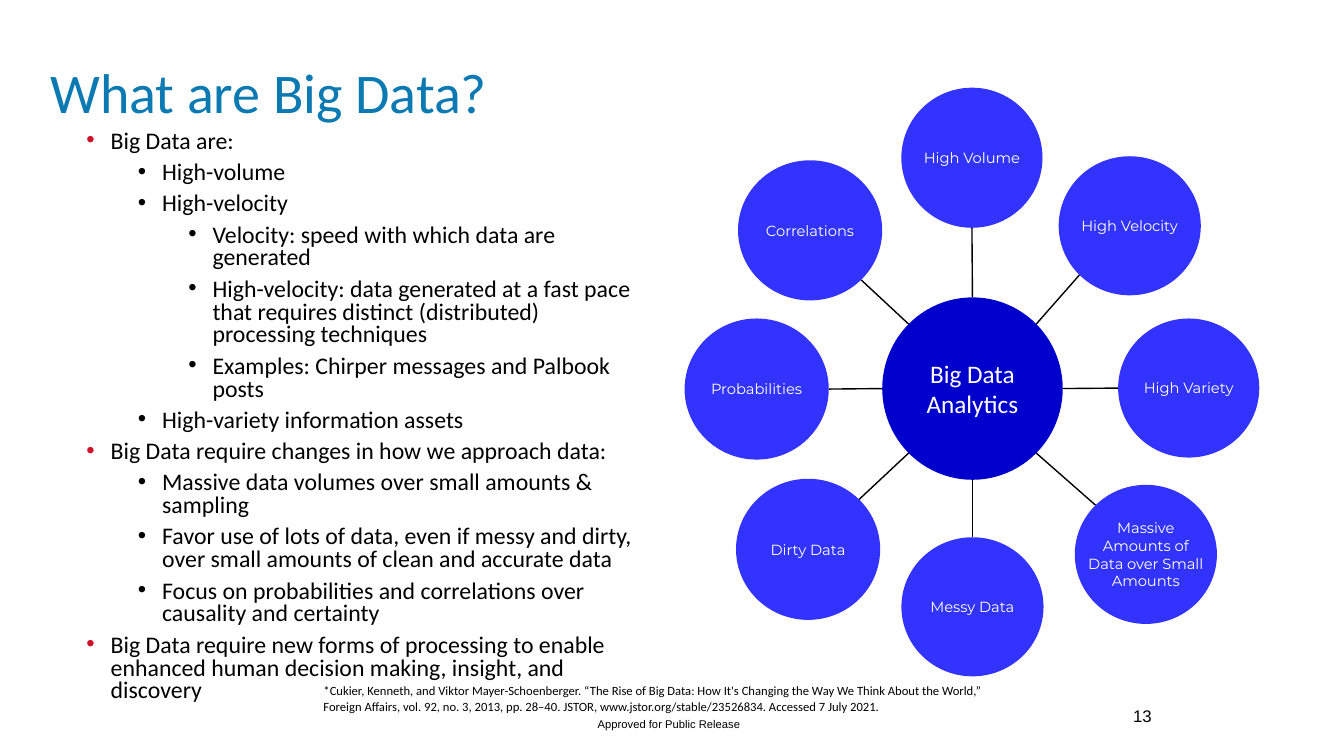
from math import hypot

from lxml.etree import SubElement
from pptx import Presentation
from pptx.dml.color import RGBColor
from pptx.enum.shapes import MSO_CONNECTOR as Connector, MSO_SHAPE as Shape
from pptx.enum.text import MSO_ANCHOR as Anchor, MSO_AUTO_SIZE as AutoSize, PP_ALIGN as Align
from pptx.oxml.ns import qn
from pptx.util import Pt

PX = 9144  # 100 px to the inch
COLORS = {"title": "0C7AB2", "text": "000000", "white": "FFFFFF",
          "bullet": "CE1126", "node": "3333FF", "hub": "0000CC"}

TITLE = "What are Big Data?"
BULLETS = [
    (0, "Big Data are:"),
    (1, "High-volume"),
    (1, "High-velocity"),
    (2, "Velocity: speed with which data are generated"),
    (2, "High-velocity: data generated at a fast pace that requires distinct "
        "(distributed) processing techniques"),
    (2, "Examples: Chirper messages and Palbook posts"),
    (1, "High-variety information assets"),
    (0, "Big Data require changes in how we approach data:"),
    (1, "Massive data volumes over small amounts & sampling"),
    (1, "Favor use of lots of data, even if messy and dirty, over small amounts "
        "of clean and accurate data"),
    (1, "Focus on probabilities and correlations over causality and certainty"),
    (0, "Big Data require new forms of processing to enable enhanced human "
        "decision making, insight, and discovery"),
]
BULLET_INDENTS = [24, 75, 125]
BULLET_HANG = 24

HUB = (["Big Data", "Analytics"], (875, 295, 179, 181))
# lines of text, box, direction from the hub
NODES = [
    (["High Volume"], (894, 87, 140, 139), (0, -1)),
    (["High Velocity"], (1050, 155, 141, 138), (1, -1)),
    (["High Variety"], (1109, 316, 140, 138), (1, 0)),
    (["Massive", "Amounts of", "Data over Small", "Amounts"], (1066, 481, 141, 138), (1, 1)),
    (["Messy Data"], (894, 533, 141, 138), (0, 1)),
    (["Dirty Data"], (730, 475, 143, 140), (-1, 1)),
    (["Probabilities"], (679, 316, 143, 140), (-1, 0)),
    (["Correlations"], (732, 159, 143, 139), (-1, -1)),
]

# text, box, font, size, wraps
NOTES = [
    ("Approved for Public Release", (583, 707, 166, 24), "Arial", 8, False),
    ("13", (1114, 695, 46, 40), "Arial", 12, True),
    ("*Cukier, Kenneth, and Viktor Mayer-Schoenberger. “The Rise of Big Data: How It's "
     "Changing the Way We Think About the World,” Foreign Affairs, vol. 92, no. 3, 2013, "
     "pp. 28–40. JSTOR, www.jstor.org/stable/23526834. Accessed 7 July 2021.",
     (311, 673, 712, 40), "Calibri", 9, True),
]


def emu(lengths):
    return [round(length * PX) for length in lengths]


def color(name):
    return RGBColor.from_string(COLORS[name])


def add_run(paragraph, text, font, size, color_name):
    run = paragraph.add_run()
    run.text = text
    run.font.name = font
    run.font.size = Pt(size)
    run.font.color.rgb = color(color_name)


def add_paragraph(frame, index):
    """Return the frame's first paragraph for index 0, otherwise a new one."""
    return frame.add_paragraph() if index else frame.paragraphs[0]


def add_bullet(paragraph, level):
    paragraph.level = level
    properties = paragraph._p.get_or_add_pPr()
    properties.set("marL", str(BULLET_INDENTS[level] * PX))
    properties.set("indent", str(-BULLET_HANG * PX))
    bullet_color = SubElement(properties, qn("a:buClr"))
    SubElement(bullet_color, qn("a:srgbClr"), val=COLORS["text" if level else "bullet"])
    SubElement(properties, qn("a:buFont"), typeface="Arial")
    SubElement(properties, qn("a:buChar"), char="•")


def add_title(slide):
    title = slide.shapes.title
    title.left, title.top, title.width, title.height = emu((40, 60, 1182, 74))
    frame = title.text_frame
    frame.auto_size = AutoSize.NONE
    frame.vertical_anchor = Anchor.MIDDLE
    paragraph = frame.paragraphs[0]
    paragraph.alignment = Align.LEFT
    paragraph.line_spacing = 0.8
    add_run(paragraph, TITLE, "Calibri", 40, "title")


def add_bullet_list(slide):
    frame = slide.shapes.add_textbox(*emu((76, 125, 583, 588))).text_frame
    frame.word_wrap = True
    frame.margin_right = 20 * PX
    for index, (level, text) in enumerate(BULLETS):
        paragraph = add_paragraph(frame, index)
        add_bullet(paragraph, level)
        paragraph.line_spacing = 0.8
        paragraph.space_after = Pt(6)
        add_run(paragraph, text, "Calibri", 17, "text")


def add_circle(slide, lines, box, fill, font, size):
    circle = slide.shapes.add_shape(Shape.OVAL, *emu(box))
    circle.shadow.inherit = False
    circle.fill.solid()
    circle.fill.fore_color.rgb = color(fill)
    circle.line.fill.background()
    frame = circle.text_frame
    frame.word_wrap = False
    frame.vertical_anchor = Anchor.MIDDLE
    for index, text in enumerate(lines):
        paragraph = add_paragraph(frame, index)
        paragraph.alignment = Align.CENTER
        add_run(paragraph, text, font, size, "white")


def rim_point(box, dx, dy):
    """Point on the ellipse inside box, in the direction (dx, dy) from its centre."""
    left, top, width, height = box
    reach = 2 * hypot(dx, dy)
    return left + width / 2 + dx * width / reach, top + height / 2 + dy * height / reach


def add_spoke(slide, node_box, direction):
    dx, dy = direction
    ends = rim_point(HUB[1], dx, dy) + rim_point(node_box, -dx, -dy)
    spoke = slide.shapes.add_connector(Connector.STRAIGHT, *emu(ends))
    spoke.line.color.rgb = color("text")
    spoke.line.width = Pt(1)
    SubElement(spoke._element.spPr, qn("a:effectLst"))


def add_note(slide, text, box, font, size, wraps):
    frame = slide.shapes.add_textbox(*emu(box)).text_frame
    frame.word_wrap = wraps
    add_run(frame.paragraphs[0], text, font, size, "text")


def main():
    presentation = Presentation()
    presentation.slide_width, presentation.slide_height = emu((1333, 750))
    slide = presentation.slides.add_slide(presentation.slide_layouts[5])
    add_title(slide)
    add_bullet_list(slide)
    for lines, box, direction in NODES:
        add_spoke(slide, box, direction)
        add_circle(slide, lines, box, "node", "Montserrat", 10.5)
    add_circle(slide, *HUB, "hub", "Calibri", 18)
    for note in NOTES:
        add_note(slide, *note)
    presentation.save("out.pptx")


if __name__ == "__main__":
    main()
